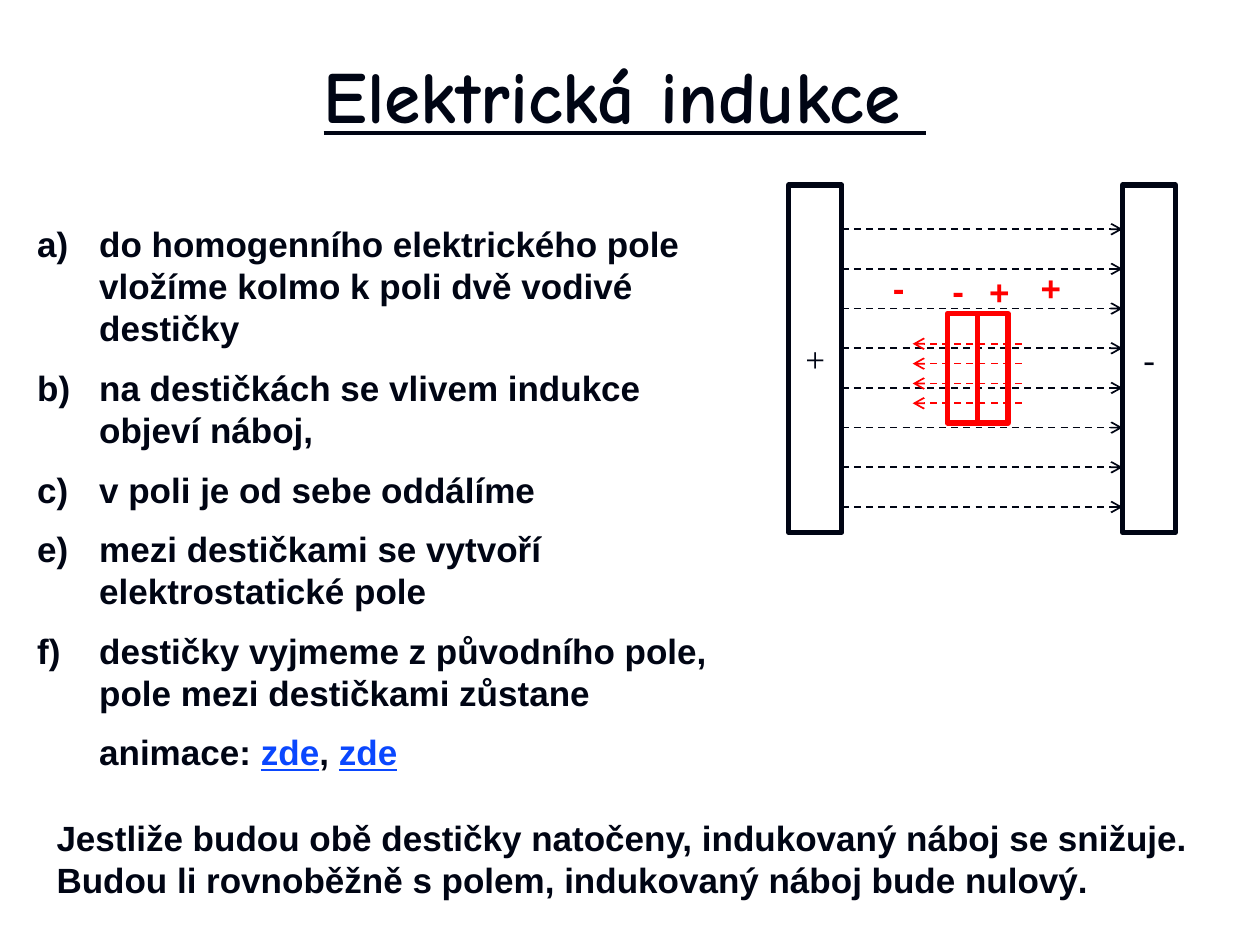
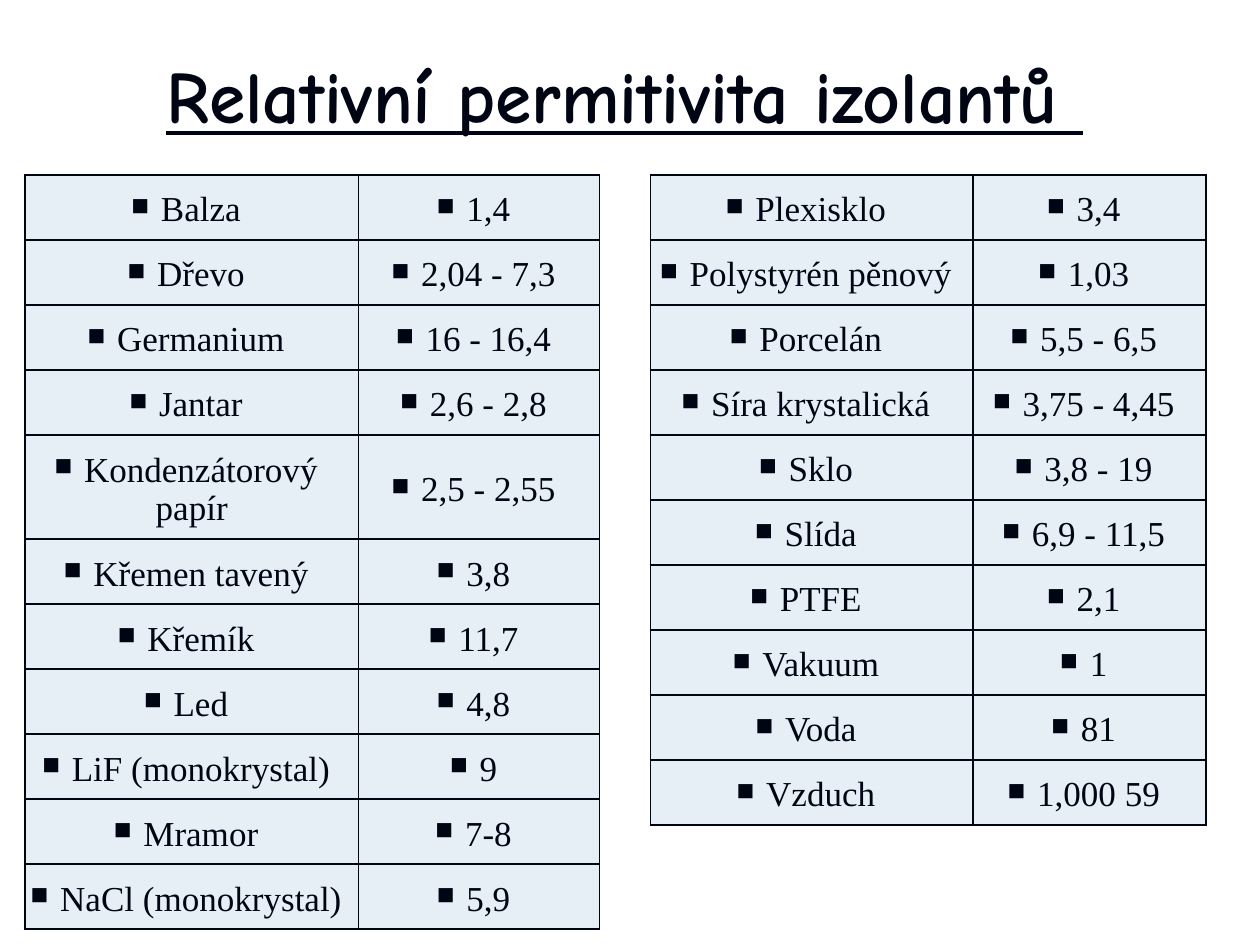
"""Build two physics slides: electric induction and relative permittivity of insulators."""
from lxml import etree
from pptx import Presentation
from pptx import util as u
from pptx.dml.color import RGBColor
from pptx.enum import dml, shapes, text
from pptx.oxml.ns import qn

Cm, Pt = u.Cm, u.Pt
COLORS = {"ink": "000514", "red": "FF0000", "link": "0A47FE", "cell": "E7EFF6"}
SANS, SERIF, COMIC = "Arial", "Times New Roman", "Comic Neue"
CENTER, LEFT = text.PP_ALIGN.CENTER, text.PP_ALIGN.LEFT
TEXT_SIZE = 20

INDUCTION_TITLE = "Elektrická indukce "
STEPS = [
    [("a)\tdo homogenního elektrického pole vložíme kolmo k poli dvě vodivé destičky", "ink")],
    [("b)\tna destičkách se vlivem indukce objeví náboj,", "ink")],
    [("c)\tv poli je od sebe oddálíme", "ink")],
    [("e)\tmezi destičkami se vytvoří elektrostatické pole", "ink")],
    [("f)\tdestičky vyjmeme z původního pole, pole mezi destičkami zůstane", "ink")],
    [("\tanimace: ", "ink"), ("zde", "link"), (", ", "ink"), ("zde", "link")],
]
NOTE = [[("Jestliže budou obě destičky natočeny, indukovaný náboj se snižuje. "
          "Budou li rovnoběžně s polem, indukovaný náboj bude nulový.", "ink")]]
CHARGES = [("-", 17.9, 5.28), ("-", 19.1, 5.33), ("+", 19.84, 5.36), ("+", 20.88, 5.28)]
PLATES = [("+", 15.9), ("-", 22.63)]
PLATE_TOP, PLATE_WIDTH, PLATE_HEIGHT = 3.73, 1.07, 7.0
SHEET_LEFT, SHEET_TOP, SHEET_WIDTH, SHEET_HEIGHT = 19.1, 6.32, 0.61, 2.21

PERMITTIVITY_TITLE = "Relativní permitivita izolantů "
LEFT_ROWS = [
    ("Balza", "1,4"), ("Dřevo", "2,04 - 7,3"), ("Germanium", "16 - 16,4"),
    ("Jantar", "2,6 - 2,8"), ("Kondenzátorový papír", "2,5 - 2,55"),
    ("Křemen tavený", "3,8"), ("Křemík", "11,7"), ("Led", "4,8"),
    ("LiF (monokrystal)", "9"), ("Mramor", "7-8"), ("NaCl (monokrystal)", "5,9"),
]
RIGHT_ROWS = [
    ("Plexisklo", "3,4"), ("Polystyrén pěnový", "1,03"), ("Porcelán", "5,5 - 6,5"),
    ("Síra krystalická", "3,75 - 4,45"), ("Sklo", "3,8 - 19"), ("Slída", "6,9 - 11,5"),
    ("PTFE", "2,1"), ("Vakuum", "1"), ("Voda", "81"), ("Vzduch", "1,000 59"),
]
TABLES = [(0.5, (6.73, 4.86), LEFT_ROWS), (13.11, (6.5, 4.7), RIGHT_ROWS)]
TABLE_TOP, ROW_HEIGHT, TALL_ROW_HEIGHT = 3.53, 1.31, 2.1
LONG_NAME = 19


def color(name):
    return RGBColor.from_string(COLORS[name])


def add_run(paragraph, words, font_name, size=TEXT_SIZE, color_name="ink", bold=False, underline=False):
    run = paragraph.add_run()
    run.text = words
    font = run.font
    font.name, font.size, font.bold, font.underline = font_name, Pt(size), bold, underline
    font.color.rgb = color(color_name)


def set_margins(frame, left, top, right, bottom):
    frame.margin_left, frame.margin_top = Cm(left), Cm(top)
    frame.margin_right, frame.margin_bottom = Cm(right), Cm(bottom)


def add_titled_slide(presentation, words):
    slide = presentation.slides.add_slide(presentation.slide_layouts[5])
    title = slide.shapes.title
    title.left, title.top, title.width, title.height = Cm(0.5), Cm(0.7), Cm(24.2), Cm(2.4)
    title.text_frame.vertical_anchor = text.MSO_ANCHOR.MIDDLE
    paragraph = title.text_frame.paragraphs[0]
    paragraph.alignment = CENTER
    add_run(paragraph, words, COMIC, 42, bold=True, underline=True)
    return slide


def add_text(slide, paragraphs, left, top, width, height, hanging=0.0):
    frame = slide.shapes.add_textbox(Cm(left), Cm(top), Cm(width), Cm(height)).text_frame
    frame.word_wrap = True
    for index, runs in enumerate(paragraphs):
        paragraph = frame.add_paragraph() if index else frame.paragraphs[0]
        paragraph.alignment = LEFT
        paragraph.space_before = Pt(TEXT_SIZE / 2 if index else 0)
        if hanging:
            properties = paragraph._p.get_or_add_pPr()
            properties.set("marL", str(Cm(hanging)))
            properties.set("indent", str(-Cm(hanging)))
        for words, color_name in runs:
            add_run(paragraph, words, SANS, color_name=color_name, bold=True,
                    underline=color_name == "link")
    return frame


def add_plate(container, left, top, width, height, color_name, sign=""):
    plate = container.add_shape(shapes.MSO_SHAPE.RECTANGLE, Cm(left), Cm(top), Cm(width), Cm(height))
    plate.shadow.inherit = False
    plate.fill.background()
    plate.line.color.rgb = color(color_name)
    plate.line.width = Pt(3)
    if sign:
        frame = plate.text_frame
        set_margins(frame, 0.1, 0.1, 0.1, 0.1)
        frame.word_wrap = False
        frame.vertical_anchor = text.MSO_ANCHOR.MIDDLE
        frame.paragraphs[0].alignment = CENTER
        add_run(frame.paragraphs[0], sign, SERIF)


def add_field_lines(container, start, end, top, gap, count, color_name):
    for index in range(count):
        y = Cm(top + index * gap)
        arrow = container.add_connector(shapes.MSO_CONNECTOR.STRAIGHT, Cm(start), y, Cm(end), y)
        arrow.line.color.rgb = color(color_name)
        arrow.line.width = Pt(1)
        arrow.line.dash_style = dml.MSO_LINE.DASH
        etree.SubElement(arrow.line._get_or_add_ln(), qn("a:tailEnd"), type="arrow")
        etree.SubElement(arrow._element.spPr, qn("a:effectLst"))


def add_borders(properties):
    for position, side in enumerate(("lnL", "lnR", "lnT", "lnB")):
        line = etree.Element(qn("a:" + side), w=str(Pt(1)))
        fill = etree.SubElement(line, qn("a:solidFill"))
        etree.SubElement(fill, qn("a:srgbClr"), val=COLORS["ink"])
        properties.insert(position, line)


def add_bullet(paragraph):
    properties = paragraph._p.get_or_add_pPr()
    bullet_color = etree.SubElement(properties, qn("a:buClr"))
    etree.SubElement(bullet_color, qn("a:srgbClr"), val=COLORS["ink"])
    etree.SubElement(properties, qn("a:buSzPct"), val="70000")
    etree.SubElement(properties, qn("a:buChar"), char="■")


def fill_cell(cell, words):
    cell.fill.solid()
    cell.fill.fore_color.rgb = color("cell")
    cell.vertical_anchor = text.MSO_ANCHOR.MIDDLE
    set_margins(cell, 0.03, 0.3, 0.03, 0.2)
    paragraph = cell.text_frame.paragraphs[0]
    paragraph.alignment = CENTER
    add_bullet(paragraph)
    add_run(paragraph, words, SERIF)
    add_borders(cell._tc.get_or_add_tcPr())


def add_permittivity_table(slide, left, widths, rows):
    heights = [TALL_ROW_HEIGHT if len(name) > LONG_NAME else ROW_HEIGHT for name, _ in rows]
    table = slide.shapes.add_table(len(rows), len(widths), Cm(left), Cm(TABLE_TOP),
                                   Cm(sum(widths)), Cm(sum(heights))).table
    table.first_row = table.horz_banding = False
    for column, width in zip(table.columns, widths):
        column.width = Cm(width)
    for row, height, values in zip(table.rows, heights, rows):
        row.height = Cm(height)
        for cell, words in zip(row.cells, values):
            fill_cell(cell, words)


def build_induction(presentation):
    slide = add_titled_slide(presentation, INDUCTION_TITLE)
    add_text(slide, STEPS, 0.5, 4.37, 14.4, 11.8, hanging=1.25)
    field = slide.shapes.add_group_shape().shapes
    for sign, left in PLATES:
        add_plate(field, left, PLATE_TOP, PLATE_WIDTH, PLATE_HEIGHT, "ink", sign)
    add_field_lines(field, PLATES[0][1] + PLATE_WIDTH, PLATES[1][1], 4.62, 0.8, 8, "ink")
    for index in range(2):
        add_plate(slide.shapes, SHEET_LEFT + index * SHEET_WIDTH, SHEET_TOP,
                  SHEET_WIDTH, SHEET_HEIGHT, "red")
    induced = slide.shapes.add_group_shape().shapes
    add_field_lines(induced, 20.6, 18.4, 6.93, 0.4, 4, "red")
    for sign, left, top in CHARGES:
        frame = add_text(slide, [[(sign, "red")]], left, top, 0.61, 1.04)
        set_margins(frame, 0.1, 0.1, 0.1, 0.1)
        frame.word_wrap = False
    add_text(slide, NOTE, 0.89, 16.33, 23.8, 1.96)


def build_permittivity(presentation):
    slide = add_titled_slide(presentation, PERMITTIVITY_TITLE)
    for left, widths, rows in TABLES:
        add_permittivity_table(slide, left, widths, rows)


def main():
    presentation = Presentation()
    presentation.slide_width, presentation.slide_height = Cm(25.4), Cm(19.05)
    build_induction(presentation)
    build_permittivity(presentation)
    presentation.save("out.pptx")


if __name__ == "__main__":
    main()
